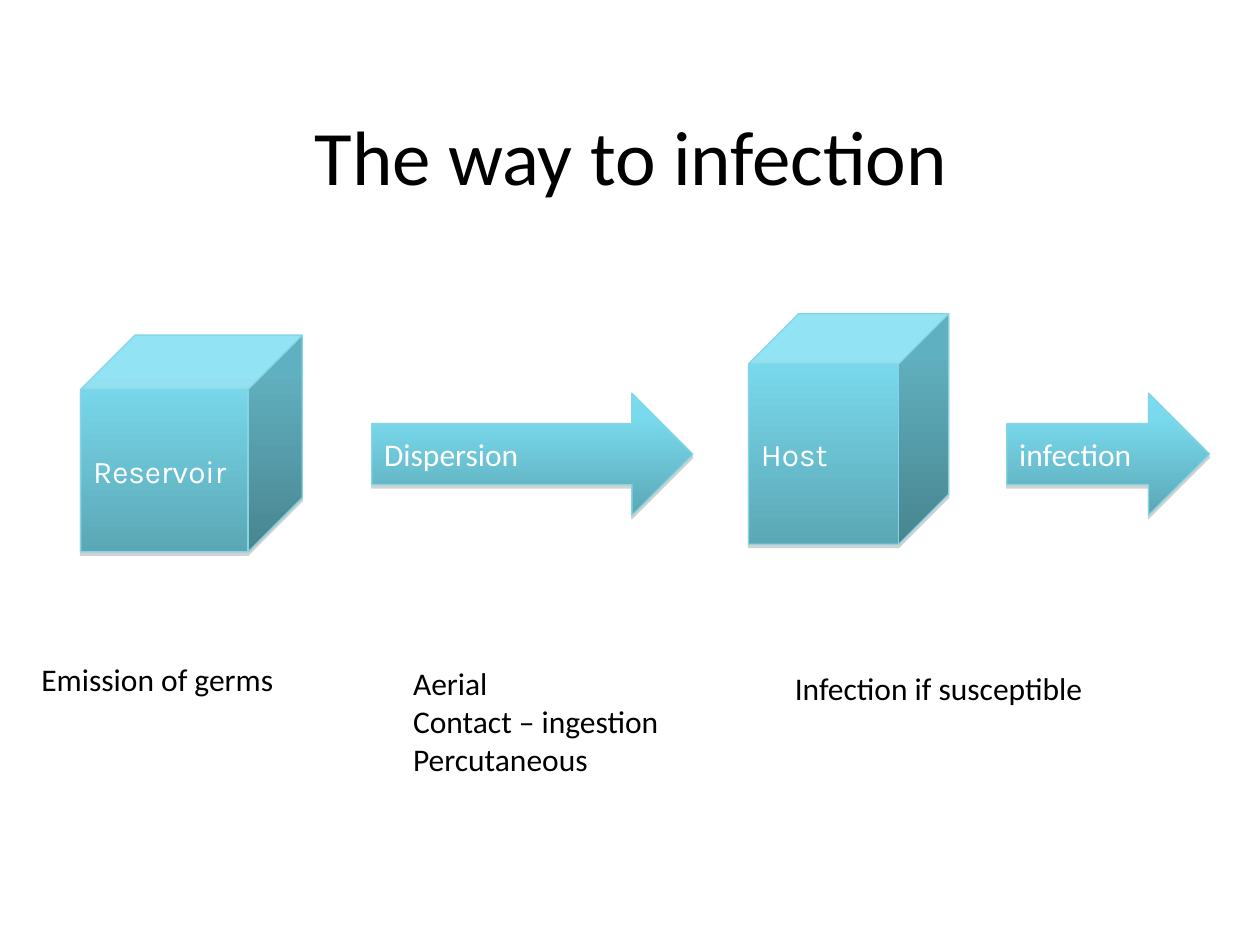
"""Build the slide on the way to infection."""
from copy import deepcopy

from lxml.etree import SubElement
from pptx import Presentation
from pptx.dml.color import RGBColor
from pptx.enum.shapes import MSO_SHAPE
from pptx.enum.text import MSO_ANCHOR, MSO_AUTO_SIZE, PP_ALIGN
from pptx.oxml.ns import qn
from pptx.util import Inches, Pt


def color(hex_string):
    """Turn a hex string into a colour."""
    return RGBColor.from_string(hex_string)


class SlideBuilder:
    """Hold the style and the current slide on a grid of 100 columns by 75 rows."""

    BODY = {"name": "Calibri", "size": Pt(18)}
    HEADING = {"name": "Calibri", "size": Pt(44)}
    LABEL = {"name": "Karla", "size": Pt(18)}
    BLACK, WHITE, EDGE, SHADOW = "000000", "FFFFFF", "86D5E4", "808080"
    GRADIENT = ((0, "77DDF0"), (0.2, "79DAED"), (1, "5BA7B5"))

    def __init__(self):
        """Start a presentation with one title-only slide."""
        self.presentation = Presentation()
        self.presentation.slide_width = Inches(10)
        self.presentation.slide_height = Inches(7.5)
        self.column = self.presentation.slide_width / 100
        self.row = self.presentation.slide_height / 75
        layout = self.presentation.slide_layouts[5]
        self.slide = self.presentation.slides.add_slide(layout)

    def place(self, left, top, width, height):
        """Convert grid units to slide lengths."""
        units = (self.column, self.row, self.column, self.row)
        return [round(n * unit) for n, unit in zip((left, top, width, height), units)]

    def set_text(self, shape, lines, style, ink, align, anchor):
        """Fill a shape with formatted paragraphs."""
        frame = shape.text_frame
        frame.word_wrap = True
        frame.vertical_anchor = anchor
        frame.text = "\n".join(lines)
        for paragraph in frame.paragraphs:
            paragraph.alignment = align
            for name, value in style.items():
                setattr(paragraph.font, name, value)
            paragraph.font.color.rgb = color(ink)

    def title(self, text, *area):
        """Move and format the title placeholder."""
        shape = self.slide.shapes.title
        names = ("left", "top", "width", "height")
        for name, value in zip(names, self.place(*area)):
            setattr(shape, name, value)
        self.set_text(shape, [text], self.HEADING, self.BLACK, PP_ALIGN.CENTER, MSO_ANCHOR.MIDDLE)

    def note(self, lines, *area):
        """Add a plain text box."""
        shape = self.slide.shapes.add_textbox(*self.place(*area))
        self.set_text(shape, lines, self.BODY, self.BLACK, PP_ALIGN.LEFT, MSO_ANCHOR.TOP)
        shape.text_frame.auto_size = MSO_AUTO_SIZE.SHAPE_TO_FIT_TEXT

    def block(self, kind, text, style, *area):
        """Add a labelled shape with a gradient and a shadow."""
        shape = self.slide.shapes.add_shape(kind, *self.place(*area))
        shape.line.color.rgb = color(self.EDGE)
        shape.line.width = Pt(0.75)
        self.shade(shape)
        self.drop_shadow(shape)
        self.set_text(shape, [text], style, self.WHITE, PP_ALIGN.LEFT, MSO_ANCHOR.MIDDLE)

    def shade(self, shape):
        """Give a shape the three-stop gradient from top to bottom."""
        shape.fill.gradient()
        shape.fill.gradient_angle = 270
        stops = next(shape.element.spPr.iter(qn("a:gsLst")))
        stops.append(deepcopy(stops[0]))
        for stop, (position, hex_string) in zip(shape.fill.gradient_stops, self.GRADIENT):
            stop.position = position
            stop.color.rgb = color(hex_string)

    def drop_shadow(self, shape):
        """Give a shape a sharp shadow just below it."""
        shape.shadow.inherit = False
        effects = shape.element.spPr.find(qn("a:effectLst"))
        shadow = SubElement(effects, qn("a:outerShdw"), blurRad="0", dist=str(Pt(1.8)),
                            dir="5400000", rotWithShape="0")
        tint = SubElement(shadow, qn("a:srgbClr"), val=self.SHADOW)
        SubElement(tint, qn("a:alpha"), val="35000")

    def cube(self, text, *area):
        """Add a cube for a carrier of germs."""
        self.block(MSO_SHAPE.CUBE, text, self.LABEL, *area)

    def arrow(self, text, left, width):
        """Add an arrow on the common arrow row."""
        self.block(MSO_SHAPE.RIGHT_ARROW, text, self.BODY, left, 31.2, width, 9.7)


def main():
    """Compose and save the slide."""
    builder = SlideBuilder()
    builder.title("The way to infection", 5.1, 6, 90, 12.5)
    builder.note(["Emission of germs"], 2.3, 51.9, 28.9, 4)
    builder.note(["Aerial", "Contact – ingestion", "Percutaneous"], 31.8, 52.2, 28.9, 10.1)
    builder.note(["Infection if susceptible"], 62.1, 52.6, 28.9, 4)
    builder.cube("Reservoir", 6.4, 26.6, 17.6, 17.2)
    builder.cube("Host", 59.4, 24.9, 15.9, 18.3)
    builder.arrow("Dispersion", 29.5, 25.5)
    builder.arrow("infection", 79.9, 16.1)
    builder.presentation.save("out.pptx")


if __name__ == "__main__":
    main()
